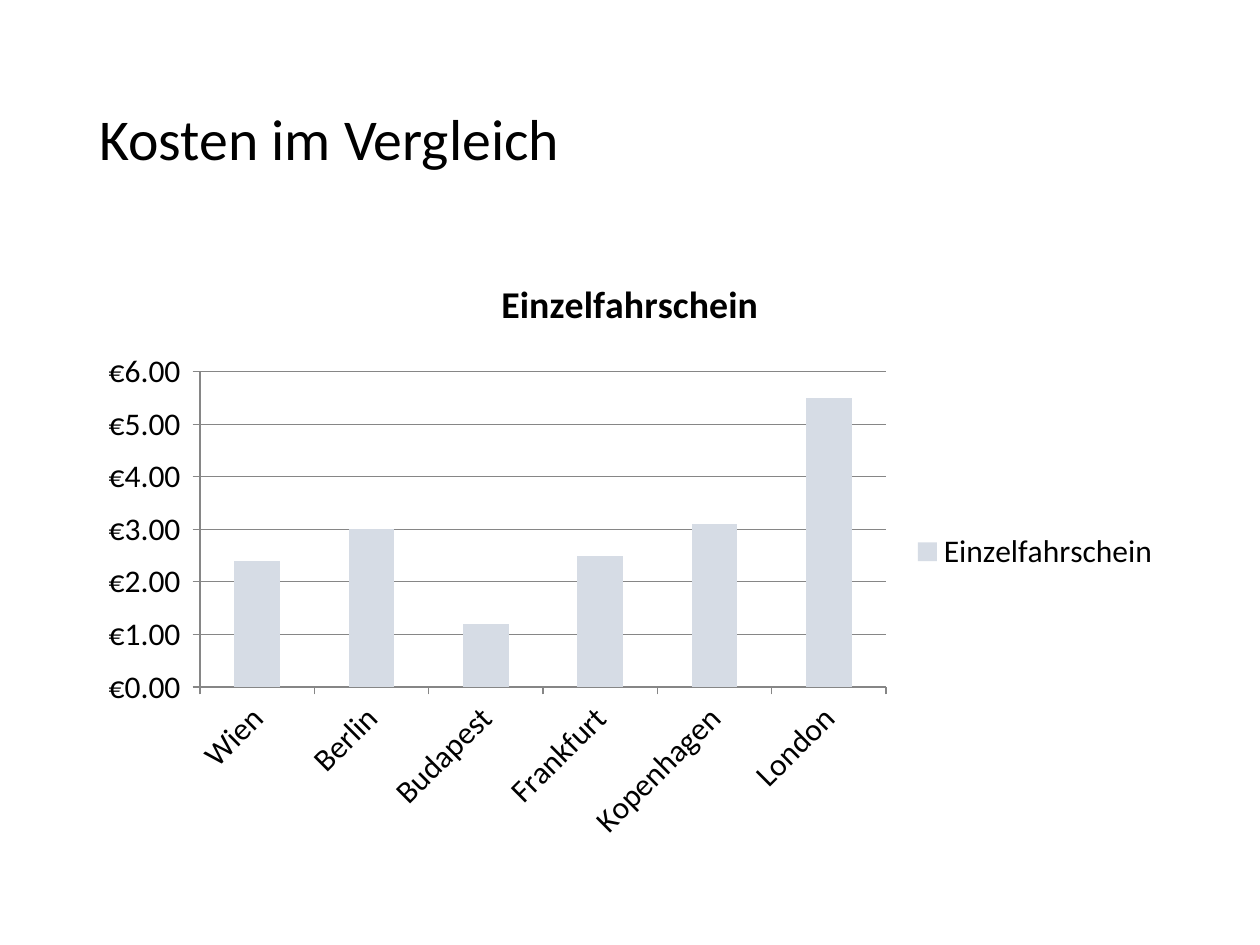
from pptx import Presentation
from pptx.chart.data import CategoryChartData
from pptx.dml.color import RGBColor
from pptx.enum.chart import XL_CHART_TYPE, XL_LEGEND_POSITION, XL_TICK_MARK
from pptx.enum.text import MSO_ANCHOR, PP_ALIGN
from pptx.util import Inches, Pt

COLUMNS = XL_CHART_TYPE.COLUMN_CLUSTERED
RIGHT = XL_LEGEND_POSITION.RIGHT
OUTSIDE, NO_TICK = XL_TICK_MARK.OUTSIDE, XL_TICK_MARK.NONE

TITLE = "Kosten im Vergleich"
SERIES = "Einzelfahrschein"
FARES = {
    "Wien": 2.4,
    "Berlin": 3,
    "Budapest": 1.2,
    "Frankfurt": 2.5,
    "Kopenhagen": 3.1,
    "London": 5.5,
}
EURO = '"€"#,##0.00_);[Red]\\("€"#,##0.00\\)'
FONT, BLACK, GRAY, BAR = "Calibri", "000000", "868686", "D6DCE5"

WIDTH, HEIGHT = 10, 7.5
MARGIN = 0.69
CONTENT = WIDTH - 2 * MARGIN
TITLE_BOX = [Inches(v) for v in (MARGIN, 0.4, CONTENT, 1.45)]
CHART_BOX = [Inches(v) for v in (MARGIN, 2, CONTENT, 4.76)]


def style(font, size, bold=False):
    font.name, font.size, font.bold = FONT, Pt(size), bold
    font.color.rgb = RGBColor.from_string(BLACK)


def hairline(line):
    line.color.rgb = RGBColor.from_string(GRAY)


def add_title(page):
    title = page.shapes.title
    title.left, title.top, title.width, title.height = TITLE_BOX
    frame = title.text_frame
    frame.text = TITLE
    frame.vertical_anchor = MSO_ANCHOR.MIDDLE
    para = frame.paragraphs[0]
    para.alignment = PP_ALIGN.LEFT
    para.line_spacing = 0.9
    style(para.runs[0].font, 33)


def add_fare_chart(page):
    data = CategoryChartData()
    data.categories = list(FARES)
    data.add_series(SERIES, list(FARES.values()), number_format=EURO)
    chart = page.shapes.add_chart(COLUMNS, *CHART_BOX, data).chart
    style(chart.font, 18)

    chart.has_title = True
    heading = chart.chart_title.text_frame
    heading.text = SERIES
    style(heading.paragraphs[0].runs[0].font, 21.6, bold=True)

    chart.has_legend = True
    chart.legend.position = RIGHT
    chart.legend.include_in_layout = False

    plot = chart.plots[0]
    plot.gap_width = 150
    plot.vary_by_categories = False
    fill = plot.series[0].format.fill
    fill.solid()
    fill.fore_color.rgb = RGBColor.from_string(BAR)

    for axis in (chart.category_axis, chart.value_axis):
        axis.major_tick_mark = OUTSIDE
        axis.minor_tick_mark = NO_TICK
        hairline(axis.format.line)
    fares = chart.value_axis
    fares.has_major_gridlines = True
    hairline(fares.major_gridlines.format.line)
    fares.tick_labels.number_format = EURO
    fares.tick_labels.number_format_is_linked = False


deck = Presentation()
deck.slide_width, deck.slide_height = Inches(WIDTH), Inches(HEIGHT)
page = deck.slides.add_slide(deck.slide_layouts[5])
add_title(page)
add_fare_chart(page)
deck.save("out.pptx")
